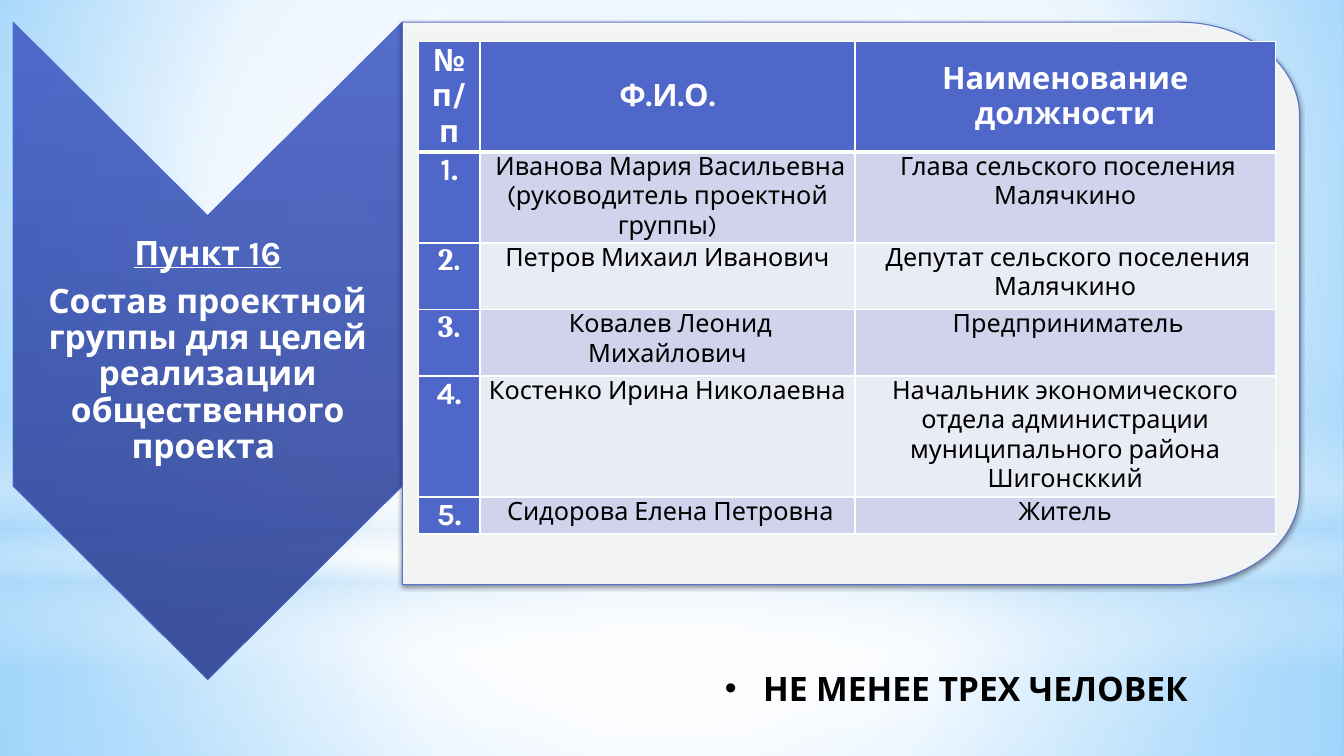
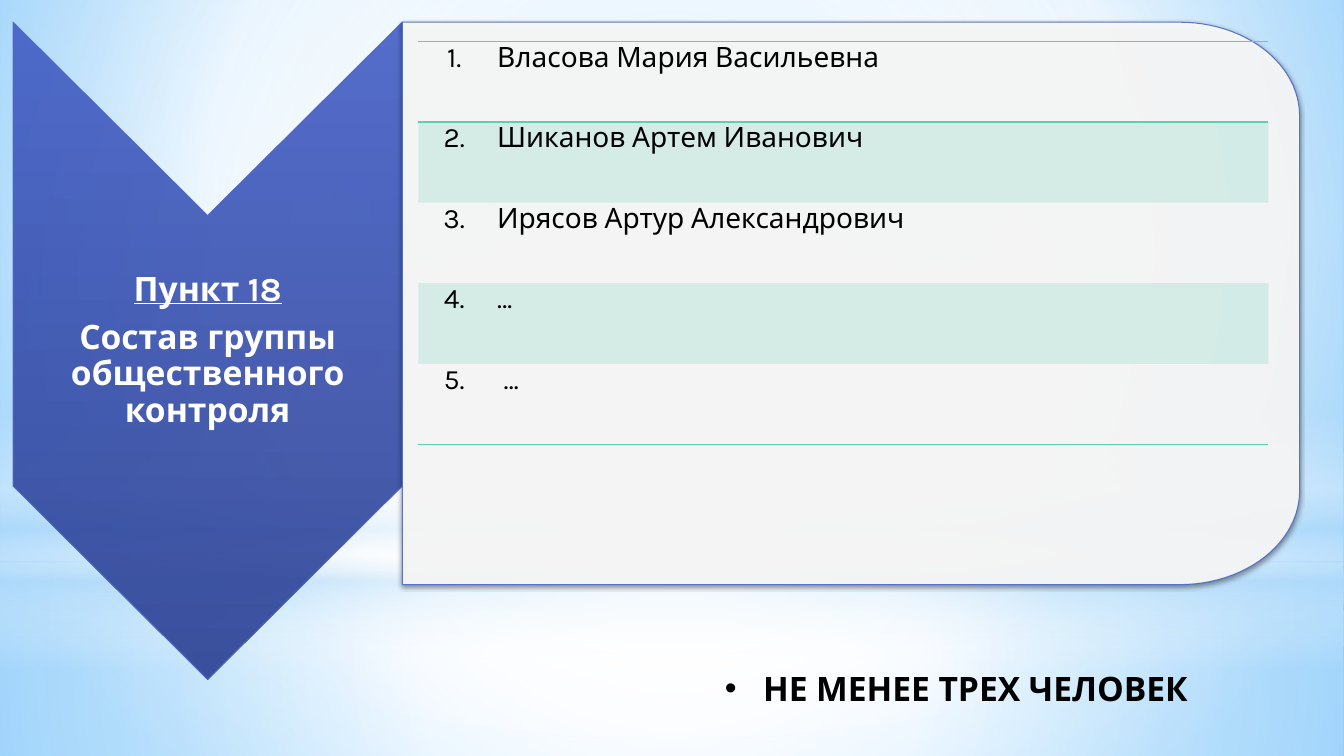
import math

import lxml.etree
import pptx
import pptx.dml.color
import pptx.enum.shapes
import pptx.enum.text
import pptx.oxml
import pptx.oxml.ns
import pptx.util

Inches = pptx.util.Inches
Pt = pptx.util.Pt
qn = pptx.oxml.ns.qn
SHAPE = pptx.enum.shapes.MSO_SHAPE
ANCHOR = pptx.enum.text.MSO_ANCHOR
LEFT = pptx.enum.text.PP_ALIGN.LEFT
CENTER = pptx.enum.text.PP_ALIGN.CENTER

BLUE, TEAL, WHITE, BLACK, SKY = "4E67C8", "5DCEAF", "FFFFFF", "000000", "B4DCFA"
BANDS = "D0D3EB", "E9EBF5"


def color(hex_text):
    return pptx.dml.color.RGBColor.from_string(hex_text)


def add(parent, tag, **values):
    """Append an XML child, such as a:ln, with the given attributes."""
    child = lxml.etree.SubElement(parent, qn(tag))
    for name, value in values.items():
        child.set(name, str(value))
    return child


def apply(target, values):
    for name, value in values.items():
        setattr(target, name, value)


def fade(element, opacity):
    """Make the solid colours inside an element partly transparent."""
    for tint in list(element.iter(qn("a:srgbClr"))):
        add(tint, "a:alpha", val=opacity * 1000)


def set_gradient(parent, stops, angle=None, focus=None):
    """Replace the a:noFill of parent by a gradient of (place, colour, opacity) stops."""
    gradient = pptx.oxml.parse_xml(f'<a:gradFill {pptx.oxml.ns.nsdecls("a")} rotWithShape="1"/>')
    stop_list = add(gradient, "a:gsLst")
    for place, tint, opacity in stops:
        stop = add(stop_list, "a:gs", pos=place * 1000)
        mark = add(stop, "a:srgbClr", val=tint)
        if opacity < 100:
            add(mark, "a:alpha", val=opacity * 1000)
    if focus:
        sides = {side: part * 1000 for side, part in zip("ltrb", focus)}
        add(add(gradient, "a:path", path="circle"), "a:fillToRect", **sides)
    else:
        add(gradient, "a:lin", ang=angle * 60000, scaled=0)
    parent.replace(parent.find(qn("a:noFill")), gradient)


def set_borders(cell, borders):
    """Draw the sides L, R, T, B given as (colour, points); hide the others."""
    properties = cell._tc.get_or_add_tcPr()
    for index, side in enumerate("LRTB"):
        tint, width = borders.get(side, (None, 0))
        edge = add(properties, f"a:ln{side}", w=Pt(width))
        if tint:
            add(add(edge, "a:solidFill"), "a:srgbClr", val=tint)
        else:
            add(edge, "a:noFill")
        properties.insert(index, edge)


class Slides:
    font = "Karla"
    middle = 50, 50, 50, 50

    def __init__(self):
        self.deck = pptx.Presentation()
        apply(self.deck, {"slide_width": Inches(13.33), "slide_height": Inches(7.5)})
        self.page = None

    def new_page(self, heading, subject):
        """Start a slide with everything that all slides share."""
        self.page = self.deck.slides.add_slide(self.deck.slide_layouts[6])
        self.backdrop()
        self.chevron(heading, subject)
        self.panel()
        self.note("НЕ МЕНЕЕ ТРЕХ ЧЕЛОВЕК")

    def backdrop(self):
        self.page.background.fill.background()
        set_gradient(self.page._element.find(".//" + qn("p:bgPr")),
                     [(0, "9ED5FF", 100), (60, WHITE, 100), (100, "5BB9FF", 100)],
                     focus=(20, 10, 20, 60))
        self.glow(SHAPE.RECTANGLE, 5.58, 1.92,
                  [(0, WHITE, 91), (37, WHITE, 76), (100, SKY, 79)], focus=self.middle)
        self.glow(SHAPE.RECTANGLE, 0, 5.58,
                  [(0, WHITE, 89), (48, WHITE, 62), (100, SKY, 79)], focus=self.middle)
        self.glow(SHAPE.RECTANGLE, 4.12, 2.5,
                  [(0, WHITE, 0), (29, WHITE, 30), (45, SKY, 40), (55, WHITE, 26),
                   (65, SKY, 60), (100, WHITE, 0)], angle=90)
        self.glow(SHAPE.OVAL, 1.75, 5.58, [(0, WHITE, 100), (56, WHITE, 0)], focus=self.middle)

    def glow(self, kind, top, height, stops, **direction):
        """Add a full-width gradient layer."""
        box = self.page.shapes.add_shape(kind, 0, Inches(top), self.deck.slide_width,
                                         Inches(height))
        box.shadow.inherit = False
        box.line.fill.background()
        box.fill.background()
        set_gradient(box._element.spPr, stops, **direction)

    def outline(self, points):
        """Add a closed polygon with the thin blue line."""
        corners = [(Inches(x), Inches(y)) for x, y in points]
        builder = self.page.shapes.build_freeform(*corners[0], scale=1.0)
        builder.add_line_segments(corners[1:], close=True)
        box = builder.convert_to_shape()
        box.shadow.inherit = False
        box.line.color.rgb = color(BLUE)
        box.line.width = Pt(0.75)
        return box

    def chevron(self, heading, subject):
        left, center, right = 0.13, 2.06, 3.99
        box = self.outline([(right, 0.22), (right, 4.82), (center, 6.74),
                            (left, 4.82), (left, 0.22), (center, 2.14)])
        box.fill.background()
        fade(box.line._ln, 90)
        set_gradient(box._element.spPr, [(0, "435EC5", 90), (100, "2B4092", 90)], angle=90)
        frame = box.text_frame
        apply(frame, {"word_wrap": True, "vertical_anchor": ANCHOR.MIDDLE,
                      "margin_left": Inches(0.02), "margin_right": Inches(0.02),
                      "margin_top": Inches(1.82), "margin_bottom": Inches(1.82)})
        layout = {"alignment": CENTER, "line_spacing": 0.9, "space_after": Pt(8.4)}
        for para, text in ((frame.paragraphs[0], heading), (frame.add_paragraph(), subject)):
            apply(para, layout)
            self.add_text(para, text, 24, WHITE, bold=True, underline=text == heading)

    def panel(self):
        left, top, right, bottom = 3.99, 0.22, 12.89, 5.8
        wide, high, steps = 1.19, 0.93, 24
        turns = [math.pi / 2 * step / steps for step in range(steps + 1)]
        upper = [(right - wide + wide * math.sin(turn), top + high - high * math.cos(turn))
                 for turn in turns]
        lower = [(x, top + bottom - y) for x, y in reversed(upper)]
        box = self.outline([(left, top), *upper, *lower, (left, bottom)])
        box.fill.solid()
        box.fill.fore_color.rgb = color(WHITE)
        properties = box._element.spPr
        fade(properties, 90)
        shadow = add(properties.find(qn("a:effectLst")), "a:outerShdw", blurRad=Pt(3.1),
                     dist=Pt(1.8), dir=90 * 60000, rotWithShape=0)
        add(add(shadow, "a:srgbClr", val=BLACK), "a:alpha", val=45000)

    def note(self, text):
        box = self.page.shapes.add_textbox(Inches(7.09), Inches(6.58), Inches(6.05), Inches(0.5))
        box.text_frame.word_wrap = True
        para = box.text_frame.paragraphs[0]
        self.add_text(para, text, 24, BLACK, bold=True)
        properties = para._p.get_or_add_pPr()
        indents = {"marL": Inches(0.38), "indent": -Inches(0.38)}
        for name, value in indents.items():
            properties.set(name, str(value))
        add(properties, "a:buFont", typeface="Arial")
        add(properties, "a:buChar", char="•")

    def add_text(self, para, text, size, tint, **format_values):
        span = para.add_run()
        span.text = text
        apply(span.font, {"name": self.font, "size": Pt(size), "bold": False} | format_values)
        span.font.color.rgb = color(tint)

    def table(self, widths, heights):
        frame = self.page.shapes.add_table(len(heights), len(widths), Inches(4.15), Inches(0.41),
                                           Inches(sum(widths)), Inches(sum(heights)))
        grid = frame.table
        apply(grid, {"first_row": False, "horz_banding": False})
        for column, width in zip(grid.columns, widths):
            column.width = Inches(width)
        for row, height in zip(grid.rows, heights):
            row.height = Inches(height)
        return grid

    def cell(self, cell, text, size, tint, fill=None, opacity=100, borders=None,
             align=CENTER, anchor=ANCHOR.TOP, **format_values):
        """Fill a table cell; each line of text becomes a paragraph."""
        apply(cell, {"margin_left": Inches(0.07), "margin_right": Inches(0.07),
                     "margin_top": 0, "margin_bottom": 0, "vertical_anchor": anchor})
        frame = cell.text_frame
        for index, line in enumerate(text.split("\n")):
            para = frame.add_paragraph() if index else frame.paragraphs[0]
            para.alignment = align
            self.add_text(para, line, size, tint, **format_values)
        if fill:
            cell.fill.solid()
            cell.fill.fore_color.rgb = color(fill)
            if opacity < 100:
                fade(cell._tc.tcPr, opacity)
        else:
            cell.fill.background()
        set_borders(cell, borders or {})


def project_group(slides):
    slides.new_page("Пункт 16", "Состав проектной группы для целей реализации "
                    "общественного проекта ")
    people = [
        (" Иванова Мария Васильевна\n(руководитель проектной группы)",
         " Глава сельского поселения Малячкино"),
        ("Петров Михаил Иванович", " Депутат сельского поселения Малячкино"),
        (" Ковалев Леонид Михайлович", " Предприниматель"),
        ("Костенко Ирина Николаевна",
         "Начальник экономического отдела администрации муниципального района Шигонсккий"),
        (" Сидорова Елена Петровна", "Житель"),
    ]
    grid = slides.table([0.61, 3.72, 4.17], [0.79] + [0.66] * 4 + [0.22])
    borders = {side: (WHITE, 1) for side in "LRTB"}
    thick = (WHITE, 3)
    for column, title in enumerate(("№ п/п", "Ф.И.О.", "Наименование должности")):
        slides.cell(grid.cell(0, column), title, 22, WHITE, BLUE, anchor=ANCHOR.MIDDLE,
                    borders=borders | {"B": thick}, bold=True)
    for row, person in enumerate(people, 1):
        edges = borders | {"T": thick} if row == 1 else borders
        number_font = "Cambria" if row in (2, 3) else slides.font
        slides.cell(grid.cell(row, 0), f"{row}.", 22, WHITE, BLUE, borders=edges,
                    bold=True, name=number_font)
        for column, text in enumerate(person, 1):
            slides.cell(grid.cell(row, column), text, 18, BLACK, BANDS[(row - 1) % 2],
                        borders=edges)


def control_group(slides):
    slides.new_page("Пункт 18", "Состав группы общественного контроля")
    names = ["Власова Мария Васильевна", "Шиканов Артем Иванович",
             "Ирясов Артур Александрович", "…", " …"]
    grid = slides.table([0.71, 7.72], [0.8] * len(names))
    rule = (TEAL, 1)
    edges = {0: {"T": rule, "B": rule}, 1: {"T": rule}, len(names) - 1: {"B": rule}}
    for row, name in enumerate(names):
        band = {"fill": TEAL if row % 2 else None, "opacity": 20, "borders": edges.get(row)}
        slides.cell(grid.cell(row, 0), f"{row + 1}.", 20, BLACK, **band)
        slides.cell(grid.cell(row, 1), name, 20, BLACK, align=LEFT, **band)


def main():
    slides = Slides()
    project_group(slides)
    control_group(slides)
    slides.deck.save("out.pptx")


if __name__ == "__main__":
    main()
